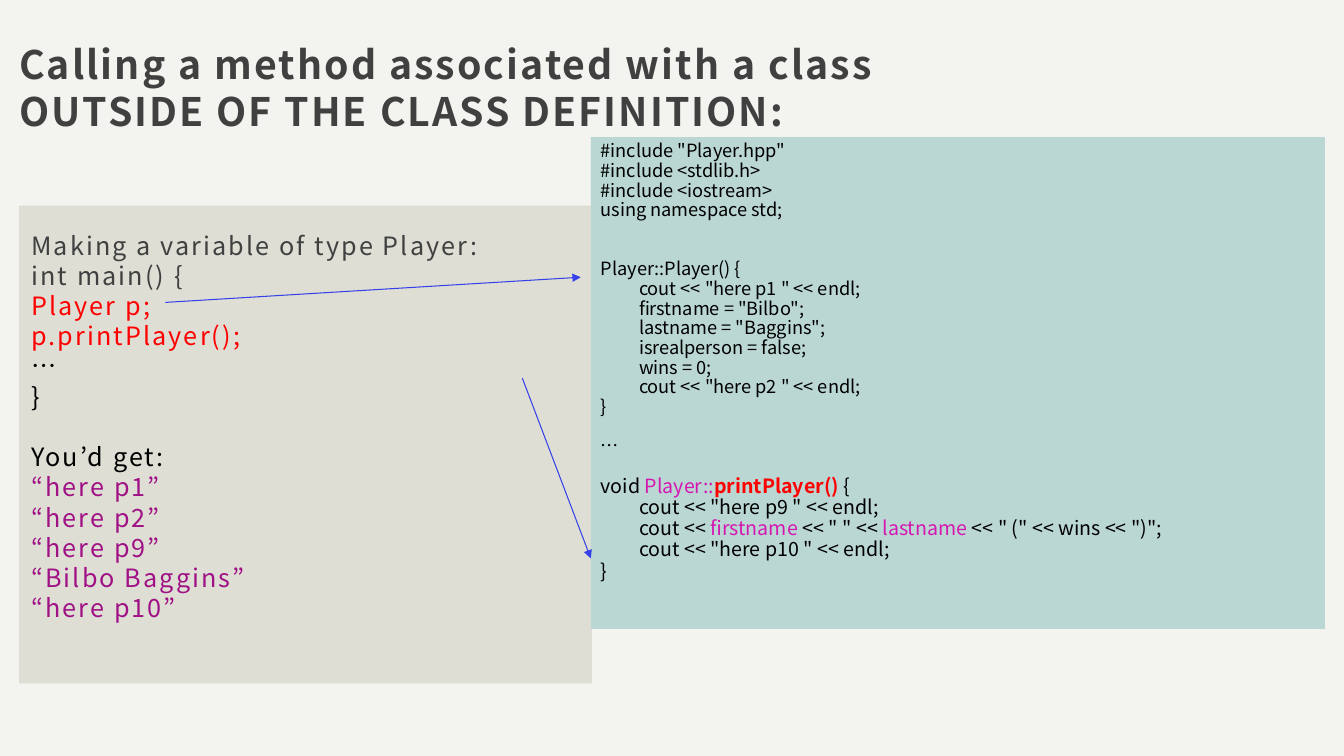
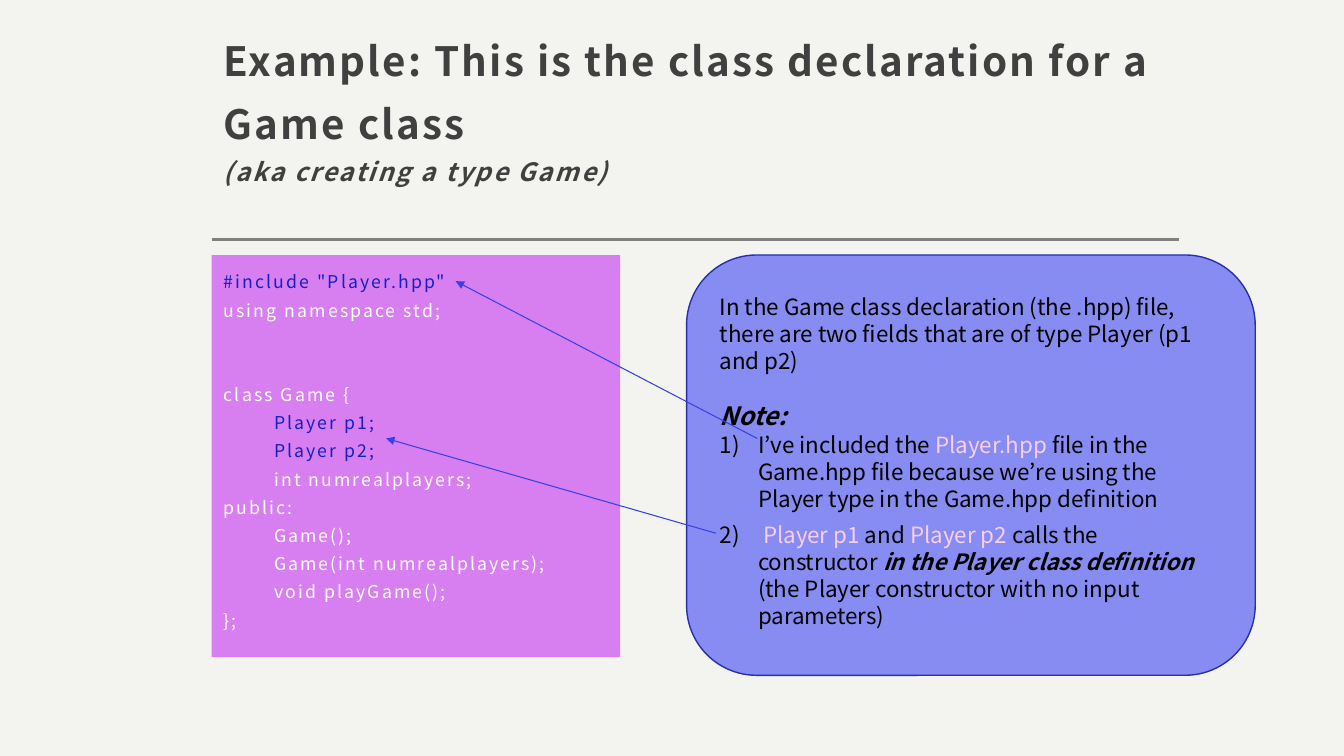
"""Builds two slides on calling class methods and declaring a Game class."""
from dataclasses import dataclass

from lxml.etree import SubElement
from pptx import Presentation
from pptx.dml.color import RGBColor
from pptx.enum.shapes import MSO_CONNECTOR as Connector, MSO_SHAPE as Shape
from pptx.enum.text import MSO_ANCHOR as Anchor, MSO_AUTO_SIZE as AutoSize, PP_ALIGN as Align
from pptx.oxml.ns import qn
from pptx.util import Inches, Pt


@dataclass(frozen=True)
class Theme:
    font: str = "Noto Sans CJK JP"
    background: str = "F3F3F0"
    rule: str = "808080"
    arrow: str = "3540E8"
    ink: str = "404040"
    black: str = "000000"
    white: str = "FFFFFF"
    red: str = "FF0000"
    purple: str = "A01185"
    magenta: str = "D517B1"
    navy: str = "1620C0"
    pale_pink: str = "FACEF1"
    teal_panel: str = "BAD7D3"
    stone_panel: str = "DEDED5"
    orchid_panel: str = "D77FF1"
    note_panel: str = "868CF1"
    note_border: str = "272FAC"
    title_size: float = 28
    large_title_size: float = 28.8
    subtitle_size: float = 18
    steps_size: float = 18
    code_size: float = 13
    method_size: float = 14
    header_size: float = 12.6
    note_size: float = 16
    tracking: float = 1.5


THEME = Theme()


@dataclass
class Line:
    runs: list
    size: float
    spacing: float = 1
    gap: float = 0
    indent: float = 0
    numbered: bool = False


def plain(texts, colour, size, **layout):
    return [Line([(text, colour)], size, **layout) for text in texts]


CALL_TITLE = plain(
    ["Calling a method associated with a class", "OUTSIDE OF THE CLASS DEFINITION:"],
    THEME.ink, THEME.title_size)
for_title = THEME.ink
GAME_TITLE = [
    Line([("Example: This is the class declaration for a Game class", THEME.ink)],
         THEME.large_title_size, 1.3),
    Line([("(aka creating a type Game)", THEME.ink, "i")], THEME.subtitle_size, 1.3),
]

STEPS = [
    *plain(["Making a variable of type Player:"], THEME.ink, THEME.steps_size, spacing=1.4),
    *plain(["int main() {"], THEME.ink, THEME.steps_size),
    *plain(["Player p;", "p.printPlayer();"], THEME.red, THEME.steps_size),
    *plain(["…", "}"], THEME.black, THEME.steps_size),
    *plain(["You’d get:"], THEME.black, THEME.steps_size, gap=21.6),
    *plain(["“here p1”", "“here p2”", "“here p9”", "“Bilbo Baggins”", "“here p10”"],
           THEME.purple, THEME.steps_size),
]

CODE = {"colour": THEME.black, "size": THEME.code_size, "spacing": 0.9}
METHOD = {"size": THEME.method_size, "spacing": 0.9}
PLAYER_CODE = [
    *plain(['#include "Player.hpp"', "#include <stdlib.h>", "#include <iostream>",
            "using namespace std;"], **CODE),
    *plain(["Player::Player() {"], gap=28, **CODE),
    *plain(['cout << "here p1 " << endl;', 'firstname = "Bilbo";', 'lastname = "Baggins";',
            "isrealperson = false;", "wins = 0;", 'cout << "here p2 " << endl;'],
           indent=0.38, **CODE),
    *plain(["}"], **CODE),
    *plain(["…"], gap=14, **CODE),
    Line([("void ", THEME.black), ("Player::", THEME.magenta),
          ("printPlayer() ", THEME.red, "b"), ("{", THEME.black)], gap=14, **METHOD),
    *plain(['cout << "here p9 " << endl;'], THEME.black, indent=0.38, **METHOD),
    Line([("cout << ", THEME.black), ("firstname ", THEME.magenta),
          ('<< " " << ', THEME.black), ("lastname ", THEME.magenta),
          ('<< " (" << wins << ")";', THEME.black)], indent=0.38, **METHOD),
    *plain(['cout << "here p10 " << endl;'], THEME.black, indent=0.38, **METHOD),
    *plain(["}"], THEME.black, **METHOD),
]

HEADER = {"size": THEME.header_size, "spacing": 1.2}
GAME_CODE = [
    *plain(['#include "Player.hpp"'], THEME.navy, **HEADER),
    *plain(["using namespace std;"], THEME.white, gap=2, **HEADER),
    *plain(["class Game {"], THEME.white, gap=42, **HEADER),
    *plain(["Player p1;", "Player p2;"], THEME.navy, gap=2, indent=0.5, **HEADER),
    *plain(["int numrealplayers;"], THEME.white, gap=2, indent=0.5, **HEADER),
    *plain(["public:"], THEME.white, gap=2, **HEADER),
    *plain(["Game();", "Game(int numrealplayers);", "void playGame();"],
           THEME.white, gap=2, indent=0.5, **HEADER),
    *plain(["};"], THEME.white, gap=2, **HEADER),
]

NOTES = [
    *plain(["In the Game class declaration (the .hpp) file, there are two fields "
            "that are of type Player (p1 and p2)"], THEME.black, THEME.note_size),
    Line([("Note:", THEME.black, "bi")], THEME.subtitle_size, gap=19.2),
    Line([("I’ve included the ", THEME.black), ("Player.hpp ", THEME.pale_pink),
          ("file in the Game.hpp file because we’re using the Player type "
           "in the Game.hpp definition", THEME.black)],
         THEME.note_size, indent=0.38, numbered=True),
    Line([(" ", THEME.black), ("Player p1 ", THEME.pale_pink), ("and ", THEME.black),
          ("Player p2 ", THEME.pale_pink), ("calls the constructor ", THEME.black),
          ("in the Player class definition", THEME.black, "bi"),
          (" (the Player constructor with no input parameters)", THEME.black)],
         THEME.note_size, gap=7, indent=0.38, numbered=True),
]

SLIDES = [
    {"title": CALL_TITLE, "title_box": (0.07, -0.02, 13.08, 1.45),
     "body": STEPS, "body_box": (0.19, 2.04, 5.68, 4.74), "body_fill": THEME.stone_panel,
     "panel": {"kind": Shape.RECTANGLE, "box": (5.86, 1.36, 7.28, 4.88),
               "fill": THEME.teal_panel},
     "text": PLAYER_CODE, "text_box": (5.86, 1.36, 7.28, 4.88),
     "arrows": [((1.64, 3), (5.76, 2.75)), ((5.18, 3.75), (5.86, 5.54))]},
    {"title": GAME_TITLE, "title_box": (2.1, 0.48, 9.59, 1.47),
     "body": GAME_CODE, "body_box": (2.1, 2.53, 4.05, 3.99), "body_fill": THEME.orchid_panel,
     "panel": {"kind": Shape.ROUNDED_RECTANGLE, "box": (6.81, 2.53, 5.64, 4.17),
               "fill": THEME.note_panel, "border": THEME.note_border},
     "text": NOTES, "text_box": (7.04, 2.86, 5.04, 3.46),
     "arrows": [((7.51, 4.35), (4.52, 2.79)), ((7.1, 5.29), (3.83, 4.35))]},
]


def rgb(colour):
    return RGBColor.from_string(colour)


def place(shape, box):
    shape.left, shape.top, shape.width, shape.height = map(Inches, box)


def paint(shape, colour):
    shape.fill.solid()
    shape.fill.fore_color.rgb = rgb(colour)


def write(frame, lines, tracking=0, bold=False):
    frame.word_wrap = True
    frame.auto_size = AutoSize.NONE
    for index, line in enumerate(lines):
        paragraph = frame.paragraphs[0] if index == 0 else frame.add_paragraph()
        paragraph.alignment = Align.LEFT
        paragraph.line_spacing = line.spacing
        paragraph.space_before = Pt(line.gap)
        properties = paragraph._p.get_or_add_pPr()
        margin = Inches(line.indent)
        properties.set("marL", str(margin))
        properties.set("indent", str(-margin if line.numbered else 0))
        if line.numbered:
            SubElement(properties, qn("a:buAutoNum"), type="arabicParenR")
        else:
            SubElement(properties, qn("a:buNone"))
        for text, colour, *style in line.runs:
            flags = "".join(style)
            run = paragraph.add_run()
            run.text = text
            run.font.name = THEME.font
            run.font.size = Pt(line.size)
            run.font.color.rgb = rgb(colour)
            run.font.bold = bold or "b" in flags
            run.font.italic = "i" in flags
            run._r.get_or_add_rPr().set("spc", str(int(tracking * 100)))


def fill_placeholder(shape, box, lines, anchor, bold=False):
    place(shape, box)
    frame = shape.text_frame
    frame.vertical_anchor = anchor
    frame.margin_left = frame.margin_right = frame.margin_top = Inches(0.12)
    frame.margin_bottom = Inches(0.1)
    write(frame, lines, THEME.tracking, bold)


def add_panel(slide, kind, box, fill, border=None):
    shape = slide.shapes.add_shape(kind, *map(Inches, box))
    shape.shadow.inherit = False
    paint(shape, fill)
    if border:
        shape.line.color.rgb = rgb(border)
        shape.line.width = Pt(1)
    else:
        shape.line.fill.background()


def add_line(slide, start, end, colour, width):
    line = slide.shapes.add_connector(Connector.STRAIGHT, *map(Inches, (*start, *end)))
    line.line.color.rgb = rgb(colour)
    line.line.width = Pt(width)
    SubElement(line._element.spPr, qn("a:effectLst"))
    return line


def add_arrow(slide, start, end):
    arrow = add_line(slide, start, end, THEME.arrow, 0.75)
    SubElement(arrow.line._get_or_add_ln(), qn("a:tailEnd"), type="triangle")


def style_master(presentation, slide):
    master = presentation.slide_master
    master.background.fill.solid()
    master.background.fill.fore_color.rgb = rgb(THEME.background)
    rule = add_line(slide, (2.1, 2.38), (11.69, 2.38), THEME.rule, 2)
    master.shapes._spTree.append(rule._element)


def build_slide(slide, content):
    add_panel(slide, **content["panel"])
    text_box = slide.shapes.add_textbox(*map(Inches, content["text_box"]))
    write(text_box.text_frame, content["text"])
    fill_placeholder(slide.shapes.title, content["title_box"], content["title"],
                     Anchor.BOTTOM, bold=True)
    body = slide.placeholders[1]
    paint(body, content["body_fill"])
    fill_placeholder(body, content["body_box"], content["body"], Anchor.TOP)
    for start, end in content["arrows"]:
        add_arrow(slide, start, end)


def main():
    presentation = Presentation()
    presentation.slide_width, presentation.slide_height = Inches(13.33), Inches(7.5)
    layout = presentation.slide_layouts[1]
    slides = [presentation.slides.add_slide(layout) for _ in SLIDES]
    style_master(presentation, slides[0])
    for slide, content in zip(slides, SLIDES):
        build_slide(slide, content)
    presentation.save("out.pptx")


if __name__ == "__main__":
    main()
